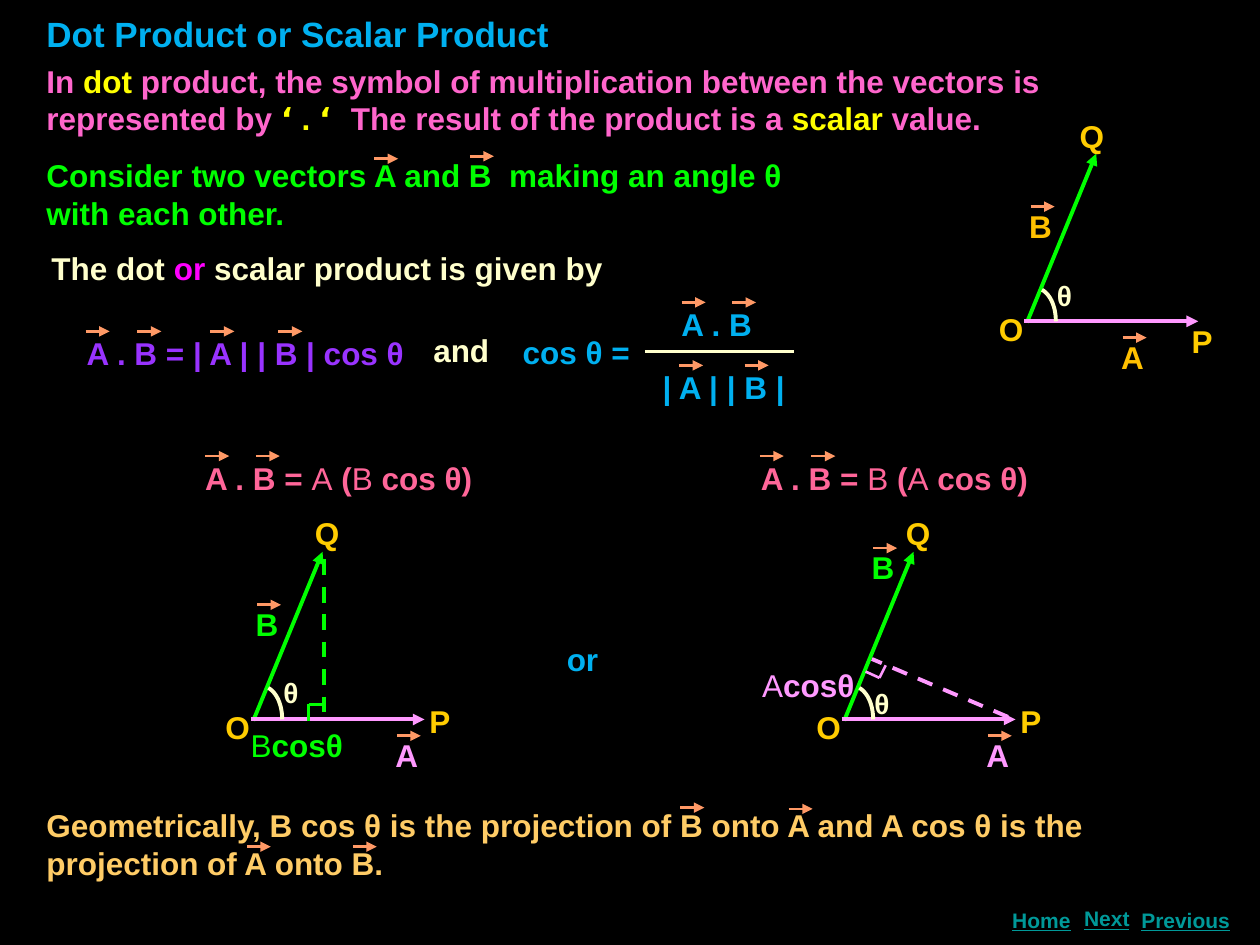
import dataclasses
import typing

import lxml.etree
import pptx
import pptx.dml.color
import pptx.enum.dml
import pptx.enum.shapes
import pptx.enum.text
import pptx.oxml.ns
import pptx.util

HUES = {
    "black": "000000", "sky": "00B0F0", "rose": "FF66CC", "yellow": "FFFF00",
    "green": "00FF00", "amber": "FFC000", "gold": "FFCC00", "orange": "FF9966",
    "pink": "FF99FF", "cream": "FFFFCC", "magenta": "FF00FF", "purple": "9933FF",
    "teal": "009999", "sand": "FFCC66", "coral": "FF6699",
}
Point = tuple[float, float]
MARK = 0.19  # length of the arrow above a vector's letter


@dataclasses.dataclass
class Run:
    text: str
    hue: str
    bold: bool = True
    face: str = "Arial"


@dataclasses.dataclass
class Label:
    x: float
    y: float
    wide: float
    high: float
    runs: list[Run]
    size: int = 18
    wrap: bool = False
    link: bool = False


@dataclasses.dataclass
class Line:
    start: Point
    end: Point
    hue: str
    width: float = 1.5
    head: bool = False
    dash: bool = False


@dataclasses.dataclass
class Figure:
    """Triangle at origin O; the other points are offsets from O."""
    o: Point
    a: Point
    b: Point
    p: Point
    q: Point
    theta: Point
    tints: tuple[str, str]


def cm(inch: float) -> int:
    return pptx.util.Cm(inch * 2.54)


def colour(name: str) -> pptx.dml.color.RGBColor:
    return pptx.dml.color.RGBColor.from_string(HUES[name])


def write(slide: typing.Any, label: Label) -> None:
    box = slide.shapes.add_textbox(*map(cm, (label.x, label.y, label.wide, label.high)))
    frame = box.text_frame
    frame.word_wrap = label.wrap
    frame.auto_size = pptx.enum.text.MSO_AUTO_SIZE.SHAPE_TO_FIT_TEXT
    para = frame.paragraphs[0]
    if label.link:
        para.alignment = pptx.enum.text.PP_ALIGN.CENTER
    for part in label.runs:
        run = para.add_run()
        run.text = part.text
        looks = {"name": part.face, "size": pptx.util.Pt(label.size),
                 "bold": part.bold, "underline": label.link}
        for key, value in looks.items():
            setattr(run.font, key, value)
        run.font.color.rgb = colour(part.hue)


def draw(slide: typing.Any, line: Line) -> None:
    link = slide.shapes.add_connector(
        pptx.enum.shapes.MSO_CONNECTOR.STRAIGHT, *map(cm, line.start + line.end))
    link.line.color.rgb = colour(line.hue)
    link.line.width = pptx.util.Pt(line.width)
    if line.dash:
        link.line.dash_style = pptx.enum.dml.MSO_LINE.DASH
    props = link._element.spPr
    qn = pptx.oxml.ns.qn
    if line.head:
        lxml.etree.SubElement(props.find(qn("a:ln")), qn("a:tailEnd"), type="triangle")
    lxml.etree.SubElement(props, qn("a:effectLst"))


def mark(slide: typing.Any, x: float, y: float) -> None:
    """Draw the small arrow above a vector's letter."""
    draw(slide, Line((x, y), (x + MARK, y), "orange", head=True))


def bend(slide: typing.Any, o: Point) -> None:
    """Draw the angle's arc at O as a sampled cubic curve."""
    knots = [(0.14, -0.25), (0.21, -0.21), (0.25, -0.11), (0.25, 0)]
    steps = 16
    dots = []
    for step in range(steps + 1):
        t = step / steps
        parts = ((1 - t) ** 3, 3 * t * (1 - t) ** 2, 3 * t * t * (1 - t), t ** 3)
        dots.append(tuple(
            cm(o[i] + sum(k * knot[i] for k, knot in zip(parts, knots))) for i in (0, 1)))
    curve = slide.shapes.build_freeform(*dots[0])
    curve.add_line_segments(dots[1:], close=False)
    arc = curve.convert_to_shape()
    arc.shadow.inherit = False
    arc.fill.background()
    arc.line.color.rgb = colour("cream")
    arc.line.width = pptx.util.Pt(2.25)


def sketch(slide: typing.Any, fig: Figure) -> None:
    x, y = fig.o
    draw(slide, Line((x + 0.02, y + 0.01), (x + 0.57, y - 1.33), "green", 2.25, True))
    draw(slide, Line((x, y), (x + 1.38, y), "pink", 2.25, True))
    bend(slide, fig.o)
    names = [("A", fig.a, fig.tints[0]), ("B", fig.b, fig.tints[1]), ("P", fig.p, "gold"),
             ("Q", fig.q, "gold"), ("O", (-0.3, -0.14), "gold")]
    for name, (dx, dy), hue in names:
        write(slide, Label(x + dx, y + dy, 0.39, 0.4, [Run(name, hue)]))
    for dx, dy in (fig.a, fig.b):
        mark(slide, x + dx + 0.11, y + dy + 0.05)
    dx, dy = fig.theta
    write(slide, Label(x + dx, y + dy, 0.38, 0.37, [Run("θ", "cream")], 16, True))


def scaled(first: str, second: str) -> list[Run]:
    return [Run("A . B = ", "coral"), Run(first, "coral", False), Run(" (", "coral"),
            Run(second, "coral", False), Run(" cos θ)", "coral")]


QUOTE = "DejaVu Sans"
LABELS = [
    Label(0.27, 0.05, 4.73, 0.44, [Run("Dot Product or Scalar Product", "sky")], 20, True),
    Label(0.27, 0.44, 8.26, 0.71, [
        Run("In ", "rose"), Run("dot", "yellow"),
        Run(" product, the symbol of multiplication between the vectors is represented by ",
            "rose"),
        Run("‘", "yellow", face=QUOTE), Run(" . ", "yellow"), Run("‘ ", "yellow", face=QUOTE),
        Run(" The result of the product is a ", "rose"), Run("scalar", "yellow"),
        Run(" value.", "rose")], wrap=True),
    Label(0.27, 1.19, 6.06, 0.71, [
        Run("Consider two vectors A and B  making an angle θ with each other.", "green")],
        wrap=True),
    Label(0.31, 1.93, 5, 0.4, [Run("The dot ", "cream"), Run("or", "magenta"),
                               Run(" scalar product is given by", "cream")], wrap=True),
    Label(0.59, 2.6, 2.74, 0.4, [Run("A . B = | A | | B | cos θ", "purple")]),
    Label(3.34, 2.58, 0.65, 0.4, [Run("and", "cream")]),
    Label(4.05, 2.59, 1.19, 0.4, [Run("cos θ =", "sky")], wrap=True),
    Label(5.31, 2.37, 0.84, 0.4, [Run("A . B", "sky")]),
    Label(5.16, 2.87, 1.18, 0.4, [Run("| A | | B |", "sky")]),
    Label(1.53, 3.59, 2.34, 0.4, scaled("A", "B")),
    Label(5.94, 3.59, 2.37, 0.4, scaled("B", "A")),
    Label(4.4, 5.03, 0.45, 0.4, [Run("or", "sky")]),
    Label(1.89, 5.71, 0.94, 0.4, [Run("B", "green", False), Run("cosθ", "green")]),
    Label(5.95, 5.24, 0.94, 0.4, [Run("A", "pink", False), Run("cosθ", "pink")]),
    Label(0.27, 6.35, 8.51, 0.71, [
        Run("Geometrically, B cos θ is the projection of B onto A and A cos θ is the "
            "projection of A onto B.", "sand")], wrap=True),
] + [Label(x, y, wide, 0.3, [Run(name, "teal")], 12, True, True) for name, x, y, wide in (
    ("Home", 7.91, 7.15, 0.71), ("Next", 8.47, 7.14, 0.63), ("Previous", 8.94, 7.15, 0.94))]

# Height of each row of vector marks, with the left ends along it
MARKS = {
    1.26: [2.97], 1.24: [3.73], 2.63: [0.68, 1.09, 1.67, 2.21], 2.4: [5.41, 5.81],
    2.9: [5.39, 5.91], 3.62: [1.63, 2.03, 6.03, 6.44], 6.41: [5.4], 6.42: [6.26],
    6.72: [1.96, 2.8],
}
LINES = [
    Line((5.12, 2.79), (6.3, 2.79), "cream"),
    Line((2.57, 4.44), (2.57, 5.71), "green", 2.25, dash=True),
    Line((2.45, 5.59), (2.57, 5.59), "green"),
    Line((2.45, 5.59), (2.45, 5.72), "green"),
    Line((8, 5.69), (6.92, 5.23), "pink", 2.25, dash=True),
    Line((6.87, 5.33), (6.98, 5.38), "pink"),
    Line((6.98, 5.38), (7.03, 5.28), "pink"),
]
FIGURES = [
    Figure((8.13, 2.55), (0.67, 0.08), (-0.06, -0.96), (1.23, -0.04), (0.34, -1.67),
           (0.16, -0.39), ("amber", "amber")),
    Figure((1.99, 5.71), (1.05, 0.08), (-0.06, -0.96), (1.32, -0.19), (0.41, -1.68),
           (0.16, -0.4), ("pink", "green")),
    Figure((6.68, 5.71), (1.05, 0.08), (0.14, -1.41), (1.32, -0.19), (0.41, -1.68),
           (0.16, -0.31), ("pink", "green")),
]


def main() -> None:
    deck = pptx.Presentation()
    deck.slide_width, deck.slide_height = cm(10), cm(7.5)
    slide = deck.slides.add_slide(deck.slide_layouts[6])
    slide.background.fill.solid()
    slide.background.fill.fore_color.rgb = colour("black")
    for place, items in ((write, LABELS), (sketch, FIGURES), (draw, LINES)):
        for item in items:
            place(slide, item)
    for y, row in MARKS.items():
        for x in row:
            mark(slide, x, y)
    deck.save("out.pptx")


if __name__ == "__main__":
    main()
